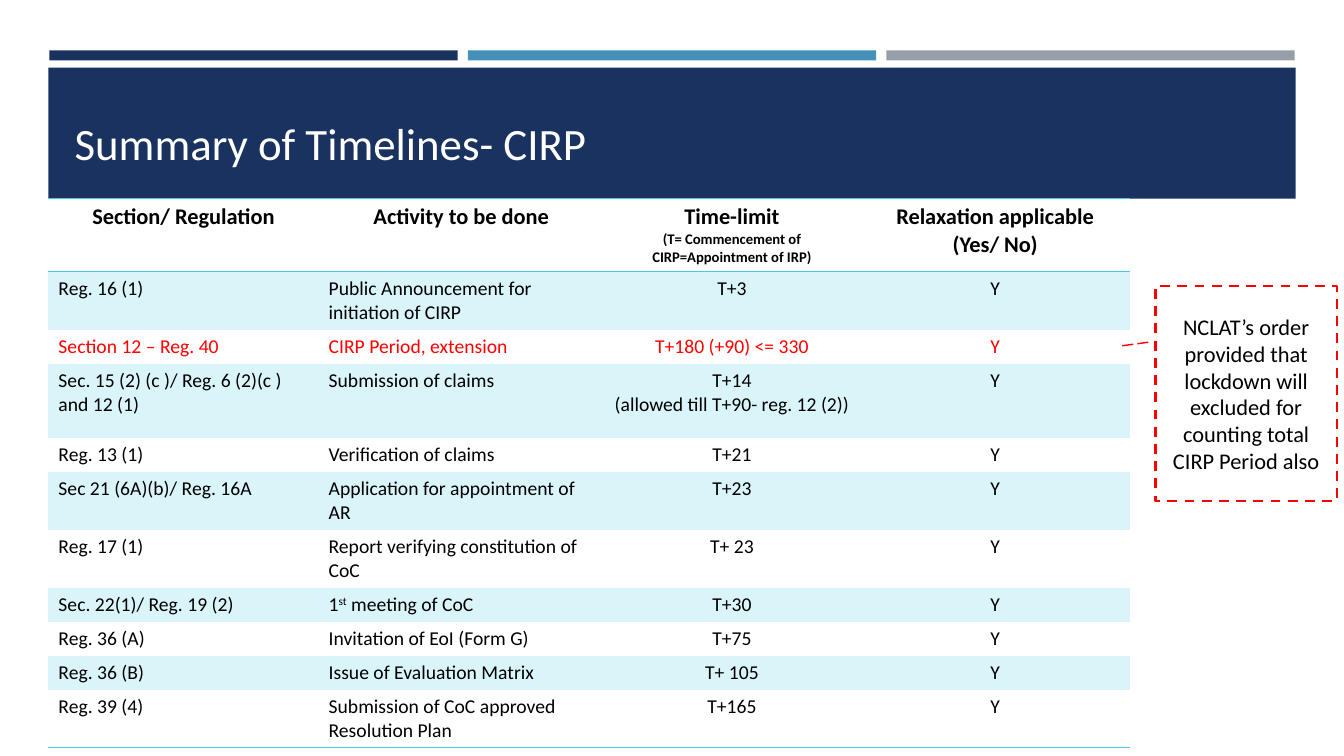
from dataclasses import dataclass

from lxml.etree import SubElement
from pptx import Presentation
from pptx.dml.color import RGBColor
from pptx.enum.dml import MSO_LINE
from pptx.enum.shapes import MSO_CONNECTOR, MSO_SHAPE
from pptx.enum.text import MSO_ANCHOR, PP_ALIGN
from pptx.oxml.ns import qn
from pptx.util import Inches, Pt

# Content
TITLE = "Summary of Timelines- CIRP"
HEADERS = [
    ["Section/ Regulation"],
    ["Activity to be done"],
    ["Time-limit", "(T= Commencement of CIRP=Appointment of IRP)"],
    ["Relaxation applicable", "(Yes/ No)"],
]
# Section, activity (a tuple alternates normal and raised text), time-limit lines, row height
STEPS = [
    ("Reg. 16 (1)", "Public Announcement for initiation of CIRP", ["T+3"], 0.53),
    ("Section 12 – Reg. 40", "CIRP Period, extension", ["T+180 (+90) <= 330"], 0.32),
    ("Sec. 15 (2) (c )/ Reg. 6 (2)(c ) and 12 (1)", "Submission of claims",
     ["T+14", "(allowed till T+90- reg. 12 (2))"], 0.74),
    ("Reg. 13 (1)", "Verification of claims", ["T+21"], 0.32),
    ("Sec 21 (6A)(b)/ Reg. 16A", "Application for appointment of AR", ["T+23"], 0.53),
    ("Reg. 17 (1)", "Report verifying constitution of CoC", ["T+ 23"], 0.53),
    ("Sec. 22(1)/ Reg. 19 (2)", ("1", "st", " meeting of CoC"), ["T+30"], 0.32),
    ("Reg. 36 (A)", "Invitation of EoI (Form G)", ["T+75"], 0.32),
    ("Reg. 36 (B)", "Issue of Evaluation Matrix", ["T+ 105"], 0.32),
    ("Reg. 39 (4)", "Submission of CoC approved Resolution Plan", ["T+165"], 0.53),
]
RELAXED = "Y"
HIGHLIGHTED_STEP = 2
CALLOUT = "NCLAT’s order provided that lockdown will excluded for counting total CIRP Period also"

# Layout in inches
LEFT = 0.48
COLUMN_WIDTHS = [2.68, 2.83, 2.54, 2.68]
HEADER_HEIGHT = 0.72
TABLE_TOP = 1.97
BAR_WIDTH, BAR_STEP = 4.05, 4.15
PLAIN_STYLE = "{2D5ABB26-0587-4C30-8999-92F81FD0307C}"


@dataclass(frozen=True)
class Theme:
    font: str = "Calibri"
    navy: str = "1A3260"
    blue: str = "4590B8"
    gray: str = "969FA7"
    rule: str = "45CBE8"
    band: str = "DAF5FA"
    red: str = "FF0000"
    black: str = "000000"
    white: str = "FFFFFF"
    title_size: float = 32
    heading_size: float = 16
    body_size: float = 14
    note_size: float = 10.5


THEME = Theme()


def color(value):
    return RGBColor.from_string(value)


def add_span(para, text, size, ink, bold=False, raised=False):
    span = para.add_run()
    span.text = text
    span.font.name = THEME.font
    span.font.size = Pt(size)
    span.font.bold = bold
    span.font.color.rgb = color(ink)
    if raised:
        span.font._element.set("baseline", "30000")


def add_box(page, left, top, width, height, fill):
    box = page.shapes.add_shape(MSO_SHAPE.RECTANGLE, Inches(left), Inches(top),
                                Inches(width), Inches(height))
    box.shadow.inherit = False
    box.fill.solid()
    box.fill.fore_color.rgb = color(fill)
    box.line.fill.background()
    return box


def add_rule(cell, side):
    line = SubElement(cell._tc.get_or_add_tcPr(), qn(f"a:{side}"), w=str(Pt(1)))
    fill = SubElement(line, qn("a:solidFill"))
    SubElement(fill, qn("a:srgbClr"), val=THEME.rule)


def fill_cell(cell, lines, sizes, ink, bold=False, centered=False):
    frame = cell.text_frame
    for index, (line, size) in enumerate(zip(lines, sizes)):
        para = frame.paragraphs[0] if index == 0 else frame.add_paragraph()
        para.alignment = PP_ALIGN.CENTER if centered else PP_ALIGN.LEFT
        parts = line if isinstance(line, tuple) else (line,)
        for position, part in enumerate(parts):
            add_span(para, part, size, ink, bold, raised=position % 2 == 1)


def add_header(page):
    # Three bars above the title band
    for index, fill in enumerate((THEME.navy, THEME.blue, THEME.gray)):
        add_box(page, 0.49 + index * BAR_STEP, 0.5, BAR_WIDTH, 0.1, fill)
    add_box(page, LEFT, 0.67, 12.37, 1.3, THEME.navy)

    # Title, brought in front of the band
    title = page.shapes.title
    title.element.getparent().append(title.element)
    title.left, title.top = Inches(0.64), Inches(0.62)
    title.width, title.height = Inches(12.06), Inches(1.11)
    title.text_frame.vertical_anchor = MSO_ANCHOR.BOTTOM
    para = title.text_frame.paragraphs[0]
    para.alignment = PP_ALIGN.LEFT
    add_span(para, TITLE, THEME.title_size, THEME.white)


def add_timeline_table(page):
    heights = [HEADER_HEIGHT] + [step[-1] for step in STEPS]
    frame = page.shapes.add_table(len(heights), len(COLUMN_WIDTHS), Inches(LEFT),
                                  Inches(TABLE_TOP), Inches(sum(COLUMN_WIDTHS)),
                                  Inches(sum(heights)))
    for style in frame.element.iter(qn("a:tableStyleId")):
        style.text = PLAIN_STYLE
    table = frame.table
    for column, width in zip(table.columns, COLUMN_WIDTHS):
        column.width = Inches(width)
    for row, height in zip(table.rows, heights):
        row.height = Inches(height)

    # Heading row
    for column, lines in enumerate(HEADERS):
        cell = table.cell(0, column)
        second_size = THEME.note_size if column == 2 else THEME.heading_size
        fill_cell(cell, lines, (THEME.heading_size, second_size), THEME.black,
                  bold=True, centered=True)
        add_rule(cell, "lnT")
        add_rule(cell, "lnB")

    # Step rows, every other one tinted
    for row, (section, activity, limit, _) in enumerate(STEPS, start=1):
        ink = THEME.red if row == HIGHLIGHTED_STEP else THEME.black
        for column, lines in enumerate(([section], [activity], limit, [RELAXED])):
            cell = table.cell(row, column)
            fill_cell(cell, lines, [THEME.body_size] * len(lines), ink, centered=column > 1)
            if row == len(STEPS):
                add_rule(cell, "lnB")
            if row % 2:
                cell.fill.solid()
                cell.fill.fore_color.rgb = color(THEME.band)


def add_callout(page):
    box = add_box(page, 11.46, 2.84, 1.8, 2.13, THEME.white)
    box.line.color.rgb = color(THEME.red)
    box.line.width = Pt(1.75)
    box.line.dash_style = MSO_LINE.DASH
    box.text_frame.word_wrap = True
    box.text_frame.vertical_anchor = MSO_ANCHOR.MIDDLE
    para = box.text_frame.paragraphs[0]
    para.alignment = PP_ALIGN.CENTER
    add_span(para, CALLOUT, THEME.heading_size, THEME.black)

    # Leader from the highlighted row
    leader = page.shapes.add_connector(MSO_CONNECTOR.STRAIGHT, Inches(11.13), Inches(3.43),
                                       Inches(11.43), Inches(3.39))
    leader.line.color.rgb = color(THEME.red)
    leader.line.width = Pt(1)
    leader.line.dash_style = MSO_LINE.LONG_DASH
    SubElement(leader.element.spPr, qn("a:effectLst"))


def main():
    deck = Presentation()
    deck.slide_width, deck.slide_height = Inches(13.33), Inches(7.5)
    page = deck.slides.add_slide(deck.slide_layouts[5])
    add_header(page)
    add_timeline_table(page)
    add_callout(page)
    deck.save("out.pptx")


if __name__ == "__main__":
    main()
